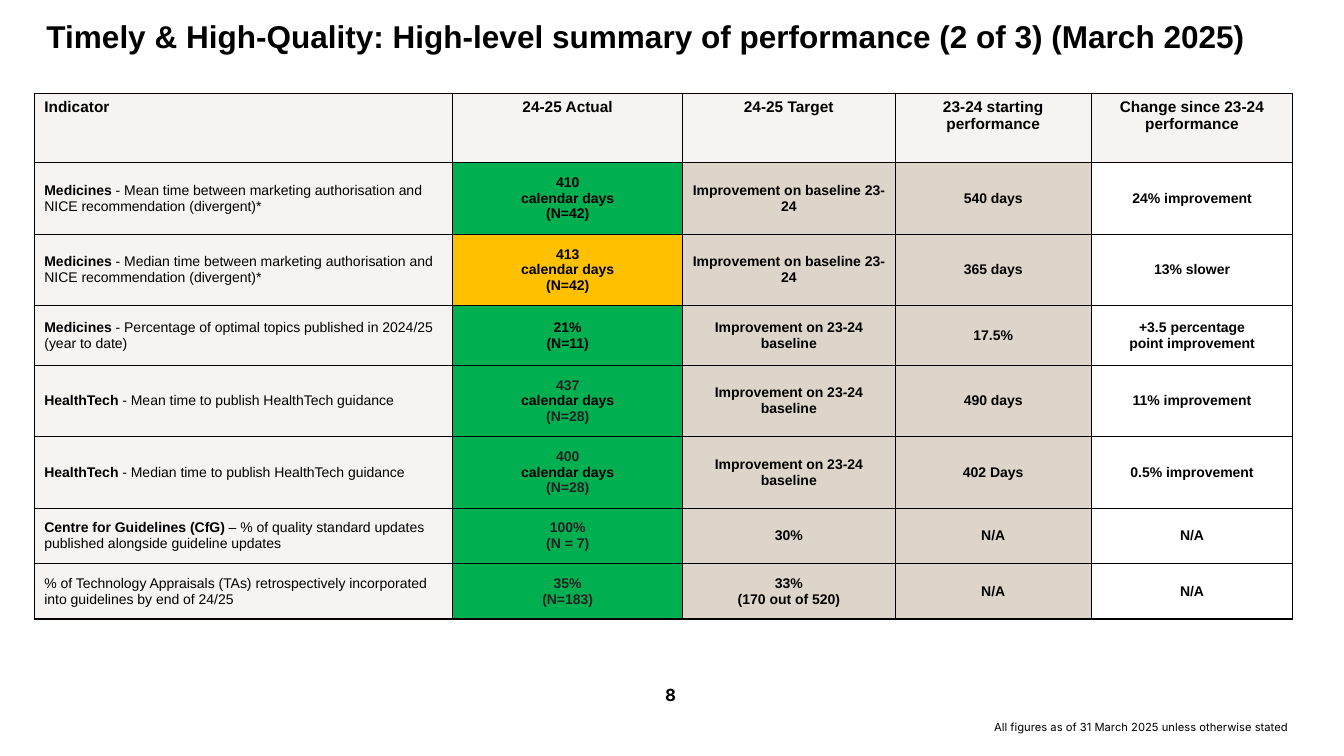
from lxml import etree
from pptx import Presentation
from pptx.dml.color import RGBColor
from pptx.enum.text import MSO_ANCHOR, PP_ALIGN
from pptx.oxml import ns
from pptx.util import Pt

BLACK, DARK, WHITE = "000000", "222222", "FFFFFF"
PALE, BEIGE, GREEN, AMBER = "F7F3F1", "DED5CA", "00B050", "FFC000"

# Content
TITLE = "Timely & High-Quality: High-level summary of performance (2 of 3) (March 2025)"
PAGE = "8"
FOOTNOTE = "All figures as of 31 March 2025 unless otherwise stated"
HEADERS = ["Indicator", "24-25 Actual", "24-25 Target",
           "23-24 starting performance", "Change since 23-24 performance"]
DAYS = "calendar days"
# (bold lead, description), status colour, [(actual line, colour)], target, start, change
ROWS = [
    (("Medicines", " - Mean time between marketing authorisation and NICE recommendation (divergent)*"),
     GREEN, [("410", BLACK), (DAYS, BLACK), ("(N=42)", BLACK)],
     "Improvement on baseline 23-24", "540 days", "24% improvement"),
    (("Medicines", " - Median time between marketing authorisation and NICE recommendation (divergent)*"),
     AMBER, [("413", BLACK), (DAYS, BLACK), ("(N=42)", BLACK)],
     "Improvement on baseline 23-24", "365 days", "13% slower"),
    (("Medicines", " - Percentage of optimal topics published in 2024/25 (year to date)"),
     GREEN, [("21%", BLACK), ("(N=11)", BLACK)],
     "Improvement on 23-24 baseline", "17.5%", "+3.5 percentage\npoint improvement"),
    (("HealthTech", " - Mean time to publish HealthTech guidance"),
     GREEN, [("437", DARK), (DAYS, BLACK), ("(N=28)", DARK)],
     "Improvement on 23-24 baseline", "490 days", "11% improvement"),
    (("HealthTech", " - Median time to publish HealthTech guidance"),
     GREEN, [("400", DARK), (DAYS, BLACK), ("(N=28)", DARK)],
     "Improvement on 23-24 baseline", "402 Days", "0.5% improvement"),
    (("Centre for Guidelines (CfG)", " – % of quality standard updates published alongside guideline updates"),
     GREEN, [("100%", DARK), ("(N = 7)", DARK)], "30%", "N/A", "N/A"),
    (("", "% of Technology Appraisals (TAs) retrospectively incorporated into guidelines by end of 24/25"),
     GREEN, [("35%", DARK), ("(N=183)", DARK)], "33%\n(170 out of 520)", "N/A", "N/A"),
]
COL_WIDTHS = [299, 164, 152, 140, 144]
ROW_HEIGHTS = [49.7, 51.1, 51.1, 42.5, 51.1, 51.1, 39.6, 39.6]


def rgb(color):
    return RGBColor.from_string(color)


def add_text(p, text, size=10, bold=True, color=BLACK, font="Arial", align=PP_ALIGN.LEFT):
    p.alignment = align
    r = p.add_run()
    r.text = text
    r.font.size, r.font.bold, r.font.name = Pt(size), bold, font
    r.font.color.rgb = rgb(color)


def add_lines(tf, lines, **fmt):
    for i, (line, color) in enumerate(lines):
        p = tf.add_paragraph() if i else tf.paragraphs[0]
        add_text(p, line, color=color, align=PP_ALIGN.CENTER, **fmt)


def style_cell(cell, fill, anchor=MSO_ANCHOR.MIDDLE):
    cell.vertical_anchor = anchor
    tc_pr = cell._tc.get_or_add_tcPr()
    for side in ("lnL", "lnR", "lnT", "lnB"):
        ln = etree.SubElement(tc_pr, ns.qn("a:" + side), w=str(Pt(1)))
        solid = etree.SubElement(ln, ns.qn("a:solidFill"))
        etree.SubElement(solid, ns.qn("a:srgbClr"), val=BLACK)
    cell.fill.solid()
    cell.fill.fore_color.rgb = rgb(fill)


def add_box(s, x, y, w, h):
    tf = s.shapes.add_textbox(Pt(x), Pt(y), Pt(w), Pt(h)).text_frame
    tf.word_wrap = True
    return tf.paragraphs[0]


prs = Presentation()
prs.slide_width, prs.slide_height = Pt(960), Pt(540)
s = prs.slides.add_slide(prs.slide_layouts[5])

# Title
title = s.shapes.title
title.left, title.top, title.width, title.height = Pt(26), Pt(11.5), Pt(934), Pt(59)
title.text_frame.vertical_anchor = MSO_ANCHOR.TOP
p = title.text_frame.paragraphs[0]
p.line_spacing = 0.9
add_text(p, TITLE, size=22.5)

# Performance table
table = s.shapes.add_table(len(ROW_HEIGHTS), len(COL_WIDTHS), Pt(24.5), Pt(66.5),
                           Pt(sum(COL_WIDTHS)), Pt(sum(ROW_HEIGHTS))).table
table.first_row = table.horz_banding = False
for col, width in zip(table.columns, COL_WIDTHS):
    col.width = Pt(width)
for row, height in zip(table.rows, ROW_HEIGHTS):
    row.height = Pt(height)

for c, header in enumerate(HEADERS):
    cell = table.cell(0, c)
    style_cell(cell, PALE, MSO_ANCHOR.TOP)
    add_text(cell.text_frame.paragraphs[0], header, size=11,
             align=PP_ALIGN.CENTER if c else PP_ALIGN.LEFT)

for r, ((lead, rest), status, actual, *others) in enumerate(ROWS, 1):
    for c, fill in enumerate([PALE, status, BEIGE, BEIGE, WHITE]):
        style_cell(table.cell(r, c), fill)
    p = table.cell(r, 0).text_frame.paragraphs[0]
    if lead:
        add_text(p, lead)
    add_text(p, rest, bold=False)
    add_lines(table.cell(r, 1).text_frame, actual)
    for c, value in enumerate(others, 2):
        add_lines(table.cell(r, c).text_frame, [(line, BLACK) for line in value.split("\n")])

# Page number and footnote
add_text(add_box(s, 371, 485.5, 216, 29), PAGE, size=12, font="Inter", align=PP_ALIGN.CENTER)
add_text(add_box(s, 703, 511, 250, 17), FOOTNOTE, size=8, bold=False, font="Inter")

prs.save("out.pptx")
